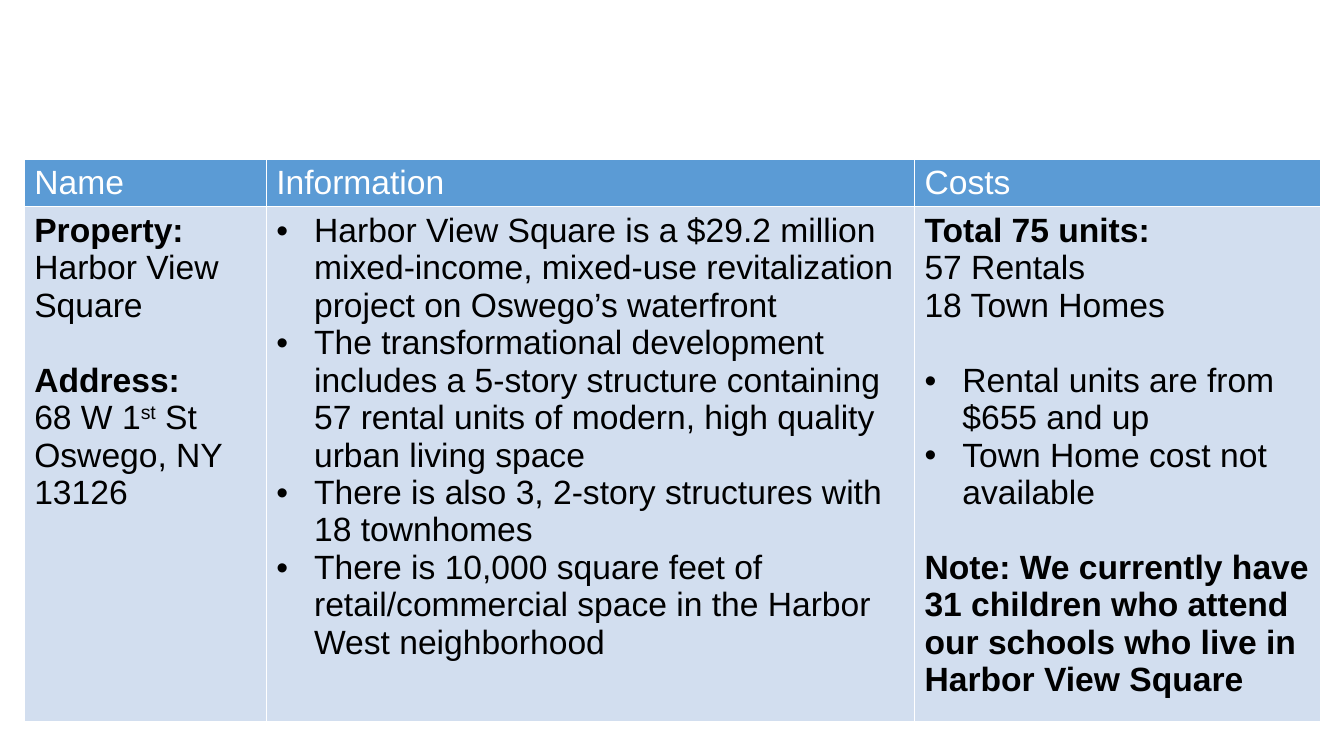
"""Build the Harbor View Square property table slide."""
from pptx import Presentation
from pptx.dml import color
from pptx.oxml import parse_xml
from pptx.oxml.ns import nsdecls
from pptx.util import Inches, Pt

COLORS = {"header": "5B9BD5", "body": "D2DEEF", "white": "FFFFFF", "black": "000000"}
FONT, SIZE, GAP, INDENT = "Arial", Pt(24), Pt(26.75), Inches(0.375)
COLUMN_WIDTHS = [2.4, 6.43, 4.03]
ROW_HEIGHTS = [0.47, 5.11]
LEFT, TOP = 0.24, 1.58

# Each paragraph is (style, text parts); "^" marks superscript parts.
HEADINGS = ["Name", "Information", "Costs"]
DETAILS = [
    [
        ("bold", ["Property:"]),
        ("plain", ["Harbor View Square"]),
        ("gap bold", ["Address:"]),
        ("plain", ["68 W 1", "^st", " St"]),
        ("plain", ["Oswego, NY 13126"]),
    ],
    [
        ("bullet", ["Harbor View Square is a $29.2 million mixed-income, mixed-use "
                    "revitalization project on Oswego’s waterfront"]),
        ("bullet", ["The transformational development includes a 5-story structure "
                    "containing 57 rental units of modern, high quality urban living space"]),
        ("bullet", ["There is also 3, 2-story structures with 18 townhomes"]),
        ("bullet", ["There is 10,000 square feet of retail/commercial space in the "
                    "Harbor West neighborhood"]),
    ],
    [
        ("bold", ["Total 75 units:"]),
        ("plain", ["57 Rentals"]),
        ("plain", ["18 Town Homes"]),
        ("gap bullet", ["Rental units are from $655 and up"]),
        ("bullet", ["Town Home cost not available"]),
        ("gap bold", ["Note: We currently have 31 children who attend our schools "
                      "who live in Harbor View Square"]),
    ],
]


def add_bullet(paragraph):
    properties = paragraph._p.get_or_add_pPr()
    properties.set("marL", str(INDENT))
    properties.set("indent", str(-INDENT))
    for markup in (
        f'<a:buClr {nsdecls("a")}><a:srgbClr val="{COLORS["black"]}"/></a:buClr>',
        f'<a:buFont {nsdecls("a")} typeface="{FONT}"/>',
        f'<a:buChar {nsdecls("a")} char="•"/>',
    ):
        properties.append(parse_xml(markup))


def write_paragraph(paragraph, style, parts, ink):
    if "gap" in style:
        paragraph.space_before = GAP
    if "bullet" in style:
        add_bullet(paragraph)
    for part in parts:
        run = paragraph.add_run()
        run.text = part.removeprefix("^")
        run.font.name, run.font.size = FONT, SIZE
        run.font.bold = "bold" in style
        run.font.color.rgb = color.RGBColor.from_string(COLORS[ink])
        if part.startswith("^"):
            run._r.get_or_add_rPr().set("baseline", "30000")


def fill_cell(cell, paragraphs, fill, ink):
    for side in ("lnL", "lnR", "lnT", "lnB"):
        cell._tc.get_or_add_tcPr().append(parse_xml(
            f'<a:{side} {nsdecls("a")} w="{Pt(1)}"><a:solidFill>'
            f'<a:srgbClr val="{COLORS["white"]}"/></a:solidFill></a:{side}>'))
    cell.fill.solid()
    cell.fill.fore_color.rgb = color.RGBColor.from_string(COLORS[fill])
    for index, (style, parts) in enumerate(paragraphs):
        frame = cell.text_frame
        paragraph = frame.add_paragraph() if index else frame.paragraphs[0]
        write_paragraph(paragraph, style, parts, ink)


def main():
    deck = Presentation()
    deck.slide_width, deck.slide_height = Inches(13.33), Inches(7.5)
    slide = deck.slides.add_slide(deck.slide_layouts[6])
    table = slide.shapes.add_table(
        len(ROW_HEIGHTS), len(COLUMN_WIDTHS), Inches(LEFT), Inches(TOP),
        Inches(sum(COLUMN_WIDTHS)), Inches(sum(ROW_HEIGHTS))).table
    for row, height in zip(table.rows, ROW_HEIGHTS):
        row.height = Inches(height)
    for index, width in enumerate(COLUMN_WIDTHS):
        table.columns[index].width = Inches(width)
        fill_cell(table.cell(0, index), [("plain", [HEADINGS[index]])], "header", "white")
        fill_cell(table.cell(1, index), DETAILS[index], "body", "black")
    deck.save("out.pptx")


if __name__ == "__main__":
    main()
